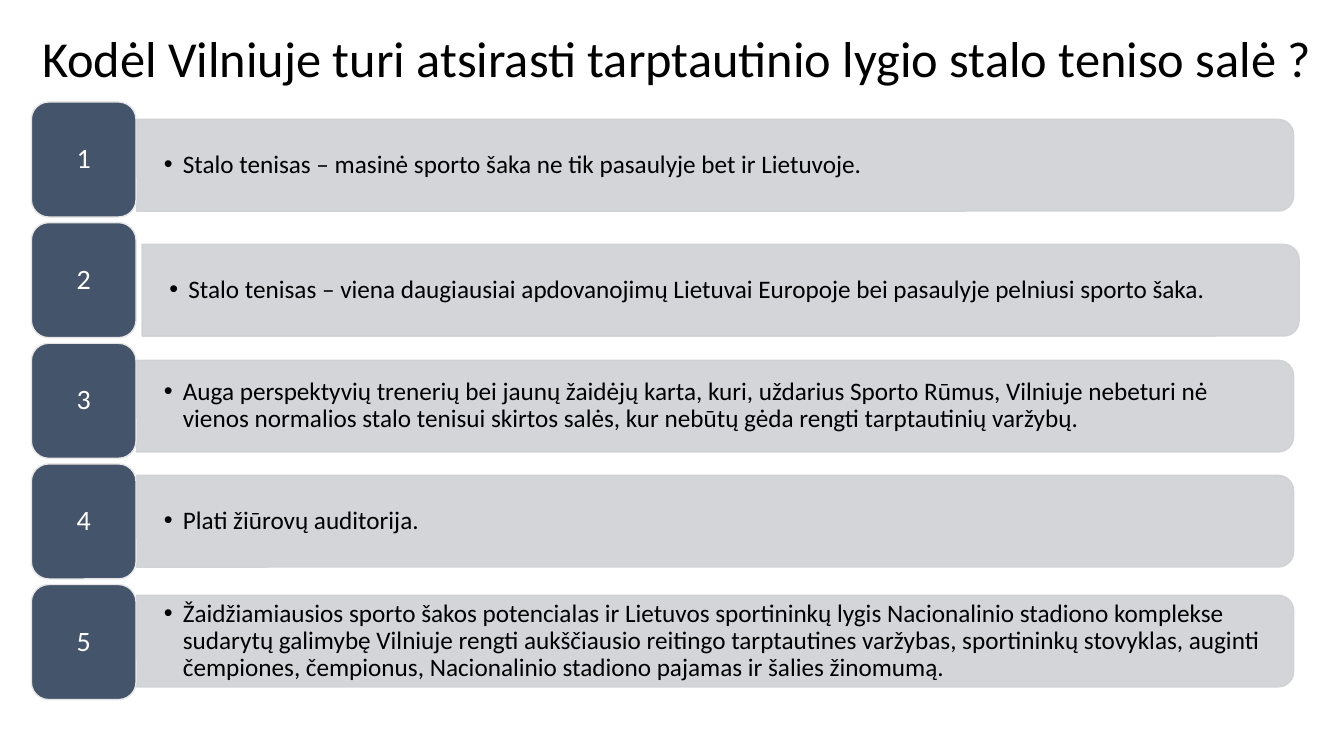
from lxml import etree
from pptx import Presentation
from pptx.dml.color import RGBColor
from pptx.enum import shapes, text
from pptx.oxml import ns
from pptx.util import Cm, Pt

# Content
TITLE = "Kodėl Vilniuje turi atsirasti tarptautinio lygio stalo teniso salė ?"
# Reason, left and top of its bar in cm
REASONS = [
    ("Stalo tenisas – masinė sporto šaka ne tik pasaulyje bet ir Lietuvoje.", 3.44, 3.01),
    ("Stalo tenisas – viena daugiausiai apdovanojimų Lietuvai Europoje bei "
     "pasaulyje pelniusi sporto šaka.", 3.58, 6.16),
    ("Auga perspektyvių trenerių bei jaunų žaidėjų karta, kuri, uždarius Sporto "
     "Rūmus, Vilniuje nebeturi nė vienos normalios stalo tenisui skirtos salės, "
     "kur nebūtų gėda rengti tarptautinių varžybų.", 3.44, 9.08),
    ("Plati žiūrovų auditorija.", 3.44, 11.98),
    ("Žaidžiamiausios sporto šakos potencialas ir Lietuvos sportininkų lygis "
     "Nacionalinio stadiono komplekse sudarytų galimybę Vilniuje rengti "
     "aukščiausio reitingo tarptautines varžybas, sportininkų stovyklas, auginti "
     "čempiones, čempionus, Nacionalinio stadiono pajamas ir šalies žinomumą.",
     3.44, 15.0),
]

# Layout in cm
BAR_LENGTH, BAR_HEIGHT = 29.16, 2.31
REASON_WIDTH, REASON_HEIGHT = 29.03, 2.08
TILE_LEFT, TILE_TOP, TILE_WIDTH, TILE_HEIGHT = 0.79, 2.57, 2.64, 2.9
TILE_PITCH = 3.04
BLACK, WHITE, SLATE, SILVER, PALE = "000000", "FFFFFF", "44546A", "CFD1D4", "E7E6E6"


def colour(value):
    return RGBColor.from_string(value)


def add_block(slide, preset, box, fill, line):
    block = slide.shapes.add_shape(preset, *(Cm(v) for v in box))
    block.shadow.inherit = False
    block.fill.solid()
    block.fill.fore_color.rgb = colour(fill)
    block.line.color.rgb = colour(line)
    block.line.width = Pt(1)
    return block


def write(shape, words, size, ink, insets, align=text.PP_ALIGN.LEFT):
    frame = shape.text_frame
    frame.text = words
    frame.word_wrap = True
    frame.vertical_anchor = text.MSO_ANCHOR.MIDDLE
    frame.margin_left = frame.margin_right = Cm(insets[0])
    frame.margin_top = frame.margin_bottom = Cm(insets[1])
    paragraph = frame.paragraphs[0]
    paragraph.alignment = align
    paragraph.line_spacing = 0.9
    font = paragraph.runs[0].font
    font.name, font.size = "Calibri", Pt(size)
    font.color.rgb = colour(ink)
    return paragraph


def add_bullet(paragraph, indent):
    props = paragraph._p.get_or_add_pPr()
    props.set("marL", str(Cm(indent)))
    props.set("indent", str(-Cm(indent)))
    etree.SubElement(props, ns.qn("a:buFont")).set("typeface", "Arial")
    etree.SubElement(props, ns.qn("a:buChar")).set("char", "•")


def add_bar(slide, left, top):
    # The bar is an upright tab turned a quarter to the right
    upright_left = left + (BAR_LENGTH - BAR_HEIGHT) / 2
    upright_top = top - (BAR_LENGTH - BAR_HEIGHT) / 2
    bar = add_block(slide, shapes.MSO_SHAPE.ROUND_2_SAME_RECTANGLE,
                    (upright_left, upright_top, BAR_HEIGHT, BAR_LENGTH), SILVER, SILVER)
    bar.rotation = 90
    for tint in bar._element.spPr.iter(ns.qn("a:srgbClr")):
        etree.SubElement(tint, ns.qn("a:alpha")).set("val", "90000")


def main():
    prs = Presentation()
    prs.slide_width, prs.slide_height = Cm(33.87), Cm(19.05)
    slide = prs.slides.add_slide(prs.slide_layouts[6])

    # Title
    title = slide.shapes.add_textbox(Cm(0.81), Cm(0.51), Cm(32.59), Cm(2.06))
    write(title, TITLE, 36, BLACK, (0.25, 0.13))

    # Numbered reasons
    for index, (reason, left, top) in enumerate(REASONS):
        add_bar(slide, left, top)
        reason_box = slide.shapes.add_textbox(
            Cm(left), Cm(top + (BAR_HEIGHT - REASON_HEIGHT) / 2),
            Cm(REASON_WIDTH), Cm(REASON_HEIGHT))
        add_bullet(write(reason_box, reason, 18, BLACK, (0.69, 0.36)), 0.48)

        tile = add_block(slide, shapes.MSO_SHAPE.ROUNDED_RECTANGLE,
                         (TILE_LEFT, TILE_TOP + index * TILE_PITCH, TILE_WIDTH, TILE_HEIGHT),
                         SLATE, PALE)
        write(tile, str(index + 1), 20, WHITE, (0.2, 0.1), text.PP_ALIGN.CENTER)

    prs.save("out.pptx")


if __name__ == "__main__":
    main()
